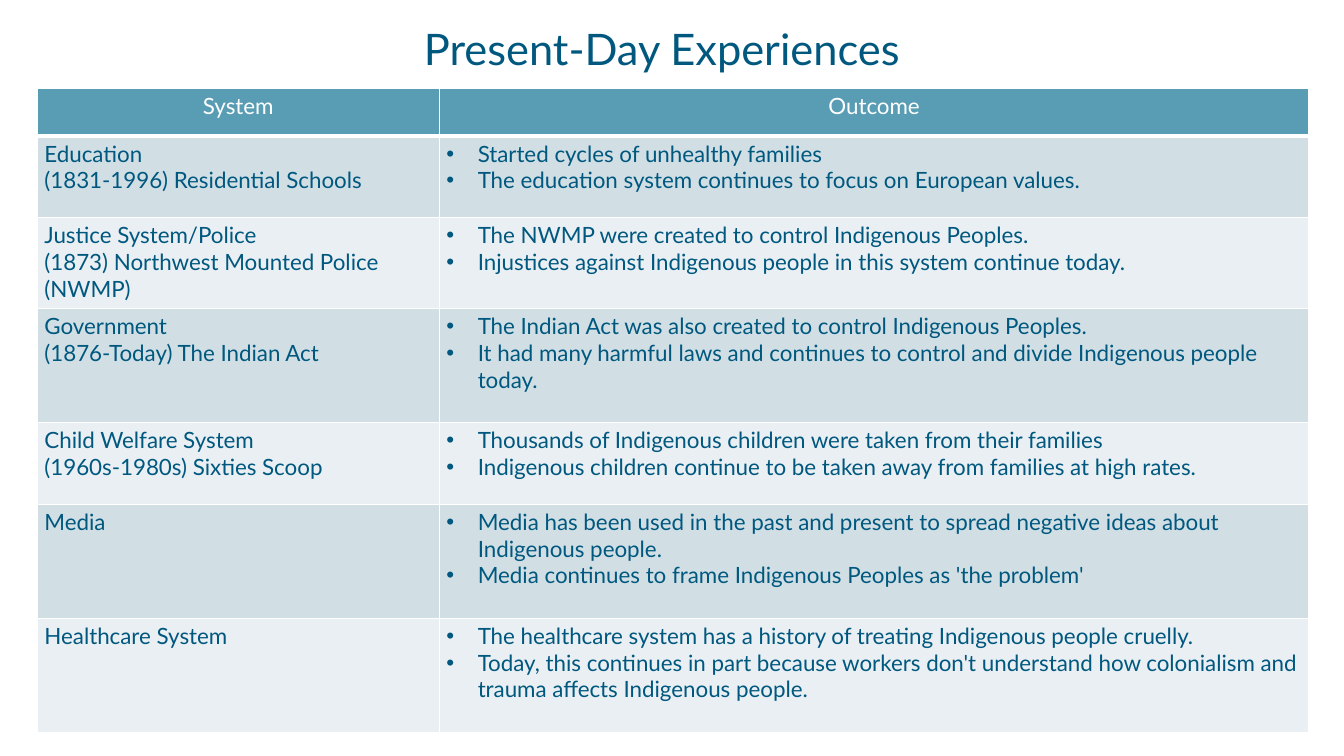
from dataclasses import dataclass

from lxml import etree
from pptx import Presentation
from pptx import util as u
from pptx.dml.color import RGBColor
from pptx.enum import text
from pptx.oxml.ns import qn

# Content: system lines, outcome bullets, row height in cm
TITLE = "Present-Day Experiences"
HEADER = ("System", "Outcome")
HEADER_HEIGHT = 1.19
ROWS = [
    (["Education", "(1831-1996) Residential Schools"],
     ["Started cycles of unhealthy families",
      "The education system continues to focus on European values."], 2.06),
    (["Justice System/Police", "(1873) Northwest Mounted Police (NWMP)"],
     ["The NWMP were created to control Indigenous Peoples.",
      "Injustices against Indigenous people in this system continue today."], 2.29),
    (["Government", "(1876-Today) The Indian Act"],
     ["The Indian Act was also created to control Indigenous Peoples.",
      "It had many harmful laws and continues to control and divide "
      "Indigenous people today."], 2.87),
    (["Child Welfare System", "(1960s-1980s) Sixties Scoop"],
     ["Thousands of Indigenous children were taken from their families",
      "Indigenous children continue to be taken away from families at high rates."], 2.06),
    (["Media"],
     ["Media has been used in the past and present to spread negative ideas "
      "about Indigenous people.",
      "Media continues to frame Indigenous Peoples as 'the problem'"], 2.87),
    (["Healthcare System"],
     ["The healthcare system has a history of treating Indigenous people cruelly.",
      "Today, this continues in part because workers don't understand how "
      "colonialism and trauma affects Indigenous people."], 2.87),
]
COLUMN_WIDTHS = (10.13, 21.92)
BULLET_INDENT = u.Cm(0.79)


@dataclass(frozen=True)
class Theme:
    font: str = "Lato"
    ink: str = "00587F"
    white: str = "FFFFFF"
    header: str = "599DB5"
    bands: tuple = ("D1DFE5", "EAEFF3")
    title_size: int = 31
    body_size: int = 16


THEME = Theme()


def format_runs(p, size, color):
    for r in p.runs:
        r.font.name = THEME.font
        r.font.size = u.Pt(size)
        r.font.bold = False
        r.font.color.rgb = RGBColor.from_string(color)


def add_bullet(p):
    pPr = p._p.get_or_add_pPr()
    pPr.set("marL", str(BULLET_INDENT))
    pPr.set("indent", str(-BULLET_INDENT))
    etree.SubElement(pPr, qn("a:buFont")).set("typeface", "Arial")
    etree.SubElement(pPr, qn("a:buChar")).set("char", "•")


def set_borders(cell, bottom):
    tcPr = cell._tc.get_or_add_tcPr()
    widths = {"a:lnL": 1, "a:lnR": 1, "a:lnT": 1, "a:lnB": bottom}
    for i, (tag, width) in enumerate(widths.items()):
        ln = etree.Element(qn(tag), w=str(u.Pt(width)))
        fill = etree.SubElement(ln, qn("a:solidFill"))
        etree.SubElement(fill, qn("a:srgbClr")).set("val", THEME.white)
        tcPr.insert(i, ln)


def fill_cell(cell, lines, fill, color, bulleted=False, align=None, bottom=1):
    cell.margin_left = cell.margin_right = u.Cm(0.18)
    cell.margin_top = cell.margin_bottom = u.Cm(0.1)
    cell.fill.solid()
    cell.fill.fore_color.rgb = RGBColor.from_string(fill)
    set_borders(cell, bottom)
    tf = cell.text_frame
    tf.text = "\n".join(lines)
    for p in tf.paragraphs:
        p.alignment = align
        if bulleted:
            add_bullet(p)
        format_runs(p, THEME.body_size, color)


def main():
    prs = Presentation()
    prs.slide_width, prs.slide_height = u.Cm(33.87), u.Cm(19.05)
    s = prs.slides.add_slide(prs.slide_layouts[5])

    # Title
    title = s.shapes.title
    title.left, title.top = u.Cm(2.54), u.Cm(-0.25)
    title.width, title.height = u.Cm(28.27), u.Cm(3.1)
    tf = title.text_frame
    tf.text = TITLE
    tf.vertical_anchor = text.MSO_ANCHOR.MIDDLE
    p = tf.paragraphs[0]
    p.alignment = text.PP_ALIGN.CENTER
    p.line_spacing = 0.9
    format_runs(p, THEME.title_size, THEME.ink)

    # Table grid
    heights = [HEADER_HEIGHT] + [height for _, _, height in ROWS]
    table = s.shapes.add_table(
        len(heights), len(COLUMN_WIDTHS), u.Cm(0.94), u.Cm(2.24),
        u.Cm(sum(COLUMN_WIDTHS)), u.Cm(sum(heights))).table
    for column, width in zip(table.columns, COLUMN_WIDTHS):
        column.width = u.Cm(width)
    for row, height in zip(table.rows, heights):
        row.height = u.Cm(height)

    # Header row
    for col, label in enumerate(HEADER):
        fill_cell(table.cell(0, col), [label], THEME.header, THEME.white,
                  align=text.PP_ALIGN.CENTER, bottom=3)

    # Body rows in alternating bands
    for i, (system, outcomes, _) in enumerate(ROWS):
        band = THEME.bands[i % 2]
        fill_cell(table.cell(i + 1, 0), system, band, THEME.ink)
        fill_cell(table.cell(i + 1, 1), outcomes, band, THEME.ink, bulleted=True)

    prs.save("out.pptx")


if __name__ == "__main__":
    main()
